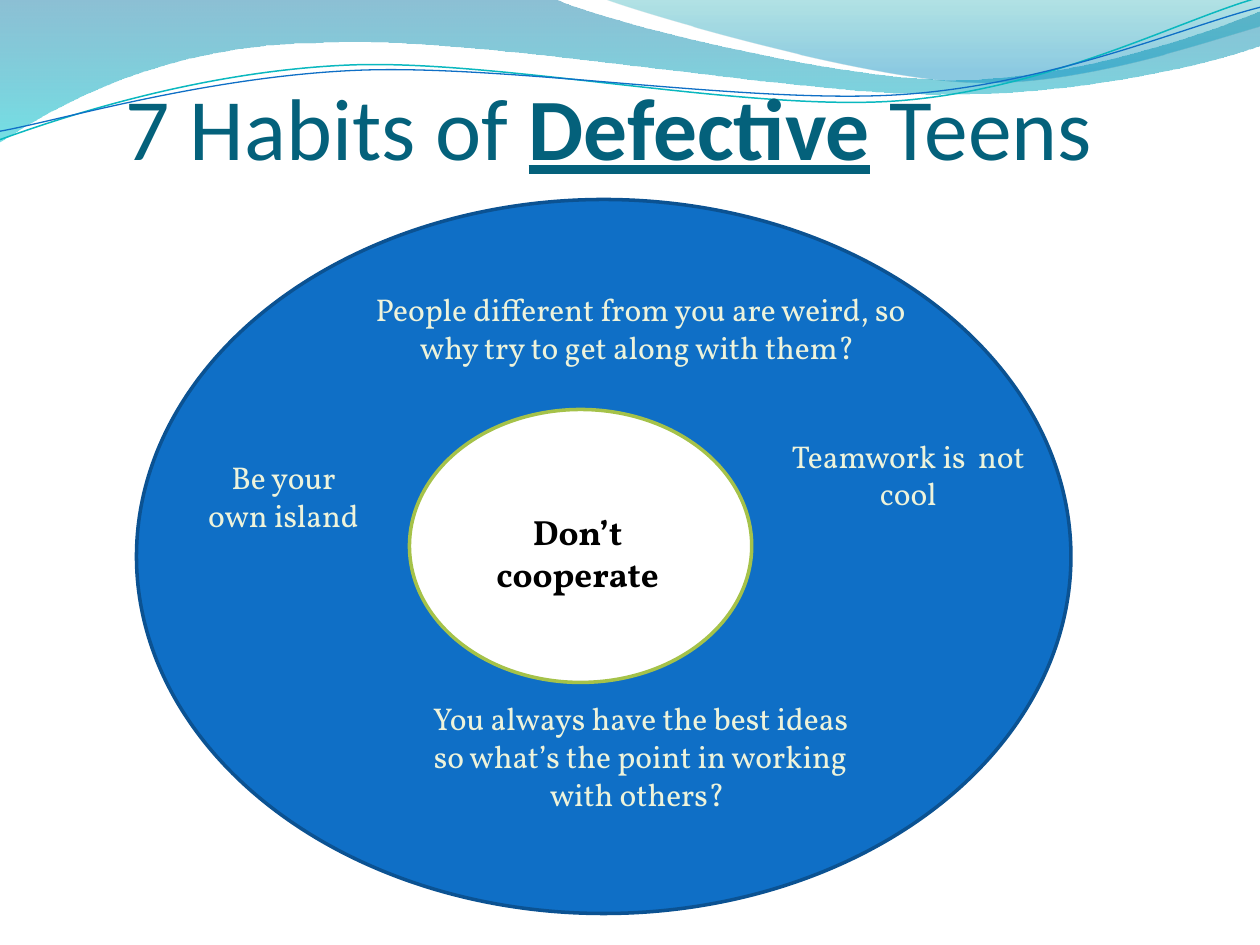
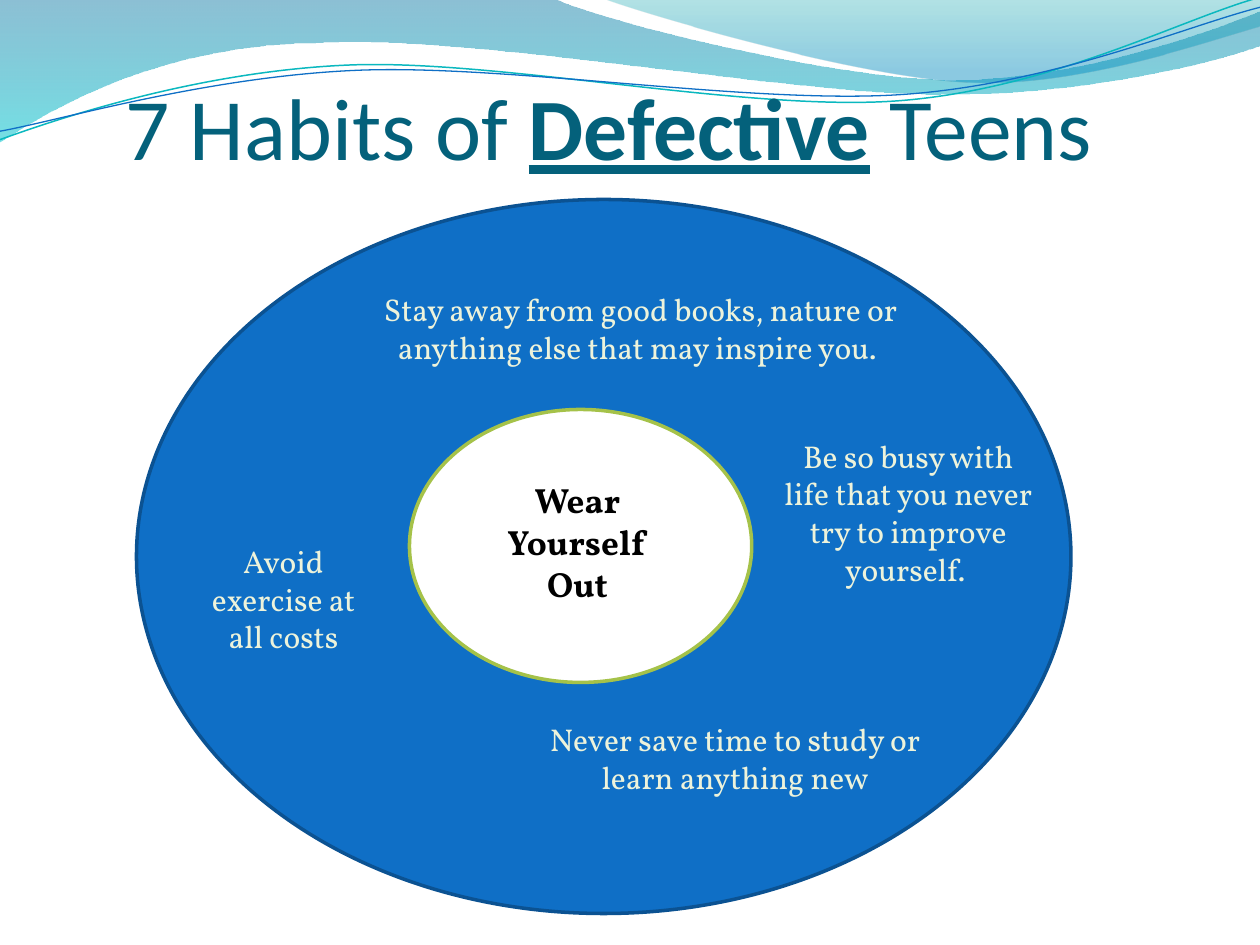
from lxml import etree
from pptx import Presentation
from pptx import util as u
from pptx.dml.color import RGBColor
from pptx.enum import shapes, text
from pptx.oxml.ns import qn

PX = 7620
PAGE = (0, 0, 1200, 900)
TITLE_BOX = (90, 20, 980, 150)
RING_BOX = (130, 190, 890, 680)
HUB = (260, 200, 326, 260)

TITLE, BLUE, BLUE_EDGE, GREEN = "04617B", "0F6FC6", "0B5292", "A5C249"
WHITE, BLACK, CREAM, TEAL = "FFFFFF", "000000", "EDF3DB", "0AB8BF"

WIDE_WAVE = [
    (0, -1), (528, -1),
    (571, 20, 797, 76, 910, 76), (1024, 76, 1150, 31, 1200, 11),
    (1201, 43),
    (1180, 53, 1044, 91, 895, 90), (746, 90, 458, 34, 308, 41),
    (155, 42, 55, 100, -1, 136),
]
RIGHT_WAVE = [
    (575, -1), (611, 13, 818, 74, 923, 78), (1027, 83, 1153, 38, 1200, 25), (1200, 0),
]
TEAL_CURVE = [
    (0, 133), (58, 112, 190, 68, 332, 62), (474, 56, 712, 107, 856, 96),
    (1000, 85, 1126, 18, 1198, -2),
]
BLUE_CURVE = [
    (0, 125), (56, 115, 197, 73, 340, 67), (484, 61, 716, 100, 860, 90),
    (1003, 80, 1129, 25, 1200, 7),
]
FILLED_WAVES = [
    (WIDE_WAVE, [(0, "0074A1", 45), (1, "00C6CF", 55)]),
    (RIGHT_WAVE, [(0, "00A1A9", 30), (0.8, "008BBF", 45)]),
]
LINE_WAVES = [(TEAL_CURVE, TEAL, 0.85), (BLUE_CURVE, BLUE, 0.75)]

SLIDES = [
    {
        "hub": ("Don’t cooperate", (320, 290, 200, 92)),
        "notes": [
            ("People different from you are weird, so why try to get along with them? ",
             (210, 80, 540, 85)),
            ("You always have the best ideas so what’s the point in working with others? ",
             (270, 470, 420, 121)),
            ("Teamwork is  not cool", (600, 220, 270, 85)),
            ("Be your own island", (50, 240, 180, 85)),
        ],
    },
    {
        "hub": ("Wear Yourself Out", (320, 260, 200, 133)),
        "notes": [
            ("Stay away from good books, nature or anything else that may inspire you. ",
             (210, 80, 540, 85)),
            ("Never save time to study or learn anything new", (360, 490, 420, 85)),
            ("Be so busy with life that you never try to improve yourself. ",
             (600, 220, 270, 157)),
            ("Avoid exercise at all costs", (50, 320, 180, 121)),
        ],
    },
]


def color(value):
    return RGBColor.from_string(value)


def emu(box):
    return [length * PX for length in box]


def within(outer, inner):
    return (outer[0] + inner[0], outer[1] + inner[1], inner[2], inner[3])


def style_font(font, name, size, value, bold=False):
    font.name = name
    font.size = u.Pt(size)
    font.bold = bold
    font.color.rgb = color(value)


def bend(outline, segments):
    lines = iter(list(outline.element.iter(qn("a:lnTo"))))
    for segment in segments[1:]:
        first, *others = [next(lines) for _ in range(len(segment) // 2)]
        if others:
            first.tag = qn("a:cubicBezTo")
        for other in others:
            first.append(other[0])
            other.getparent().remove(other)


def add_outline(page, box, segments, close):
    points = [
        emu((box[0] + x, box[1] + y))
        for segment in segments
        for x, y in zip(segment[::2], segment[1::2])
    ]
    builder = page.shapes.build_freeform(*points[0])
    builder.add_line_segments(points[1:], close=close)
    outline = builder.convert_to_shape()
    outline.shadow.inherit = False
    bend(outline, segments)
    return outline


def fill_gradient(shape, stops):
    shape.fill.gradient()
    shape.fill.gradient_angle = 270
    for stop, (position, value, _) in zip(shape.fill.gradient_stops, stops):
        stop.position = position
        stop.color.rgb = color(value)
    for tone, (_, _, opacity) in zip(shape.element.spPr.iter(qn("a:srgbClr")), stops):
        etree.SubElement(tone, qn("a:alpha")).set("val", str(opacity * 1000))


def add_waves(page, layout, box):
    waves = []
    for segments, stops in FILLED_WAVES:
        wave = add_outline(page, box, segments, True)
        fill_gradient(wave, stops)
        wave.line.fill.background()
        waves.append(wave)
    for segments, value, width in LINE_WAVES:
        wave = add_outline(page, box, segments, False)
        wave.fill.background()
        wave.line.color.rgb = color(value)
        wave.line.width = u.Pt(width)
        waves.append(wave)
    for wave in waves:
        layout.shapes.element.append(wave.element)


def add_title(page, box):
    title = page.shapes.title
    title.left, title.top, title.width, title.height = emu(box)
    frame = title.text_frame
    frame.margin_left = frame.margin_right = frame.margin_bottom = 0
    frame.margin_top = u.Inches(0.05)
    frame.vertical_anchor = text.MSO_ANCHOR.BOTTOM
    frame.auto_size = text.MSO_AUTO_SIZE.NONE
    para = frame.paragraphs[0]
    para.alignment = text.PP_ALIGN.CENTER
    for words, stressed in (("7 Habits of ", False), ("Defective", True), (" Teens", False)):
        span = para.add_run()
        span.text = words
        style_font(span.font, "Calibri", 50, TITLE, stressed)
        span.font.underline = stressed


def add_ellipse(page, box, fill, edge):
    ellipse = page.shapes.add_shape(shapes.MSO_SHAPE.OVAL, *emu(box))
    ellipse.shadow.inherit = False
    ellipse.fill.solid()
    ellipse.fill.fore_color.rgb = color(fill)
    ellipse.line.color.rgb = color(edge)
    ellipse.line.width = u.Pt(2)


def add_note(page, box, words, size, value, bold=False):
    frame = page.shapes.add_textbox(*emu(box)).text_frame
    frame.word_wrap = True
    frame.auto_size = text.MSO_AUTO_SIZE.SHAPE_TO_FIT_TEXT
    para = frame.paragraphs[0]
    para.text = words
    para.alignment = text.PP_ALIGN.CENTER
    style_font(para.font, "Vollkorn", size, value, bold)


def add_ring(page, box, hub, notes):
    add_ellipse(page, box, BLUE, BLUE_EDGE)
    add_ellipse(page, within(box, HUB), WHITE, GREEN)
    words, place = hub
    add_note(page, within(box, place), words, 20, BLACK, True)
    for words, place in notes:
        add_note(page, within(box, place), words, 18, CREAM)


def main():
    deck = Presentation()
    deck.slide_width, deck.slide_height = emu(PAGE[2:])
    layout = deck.slide_layouts[5]
    pages = [deck.slides.add_slide(layout) for _ in SLIDES]
    add_waves(pages[0], layout, PAGE)
    for page, content in zip(pages, SLIDES):
        add_title(page, TITLE_BOX)
        add_ring(page, RING_BOX, content["hub"], content["notes"])
    deck.save("out.pptx")


if __name__ == "__main__":
    main()
